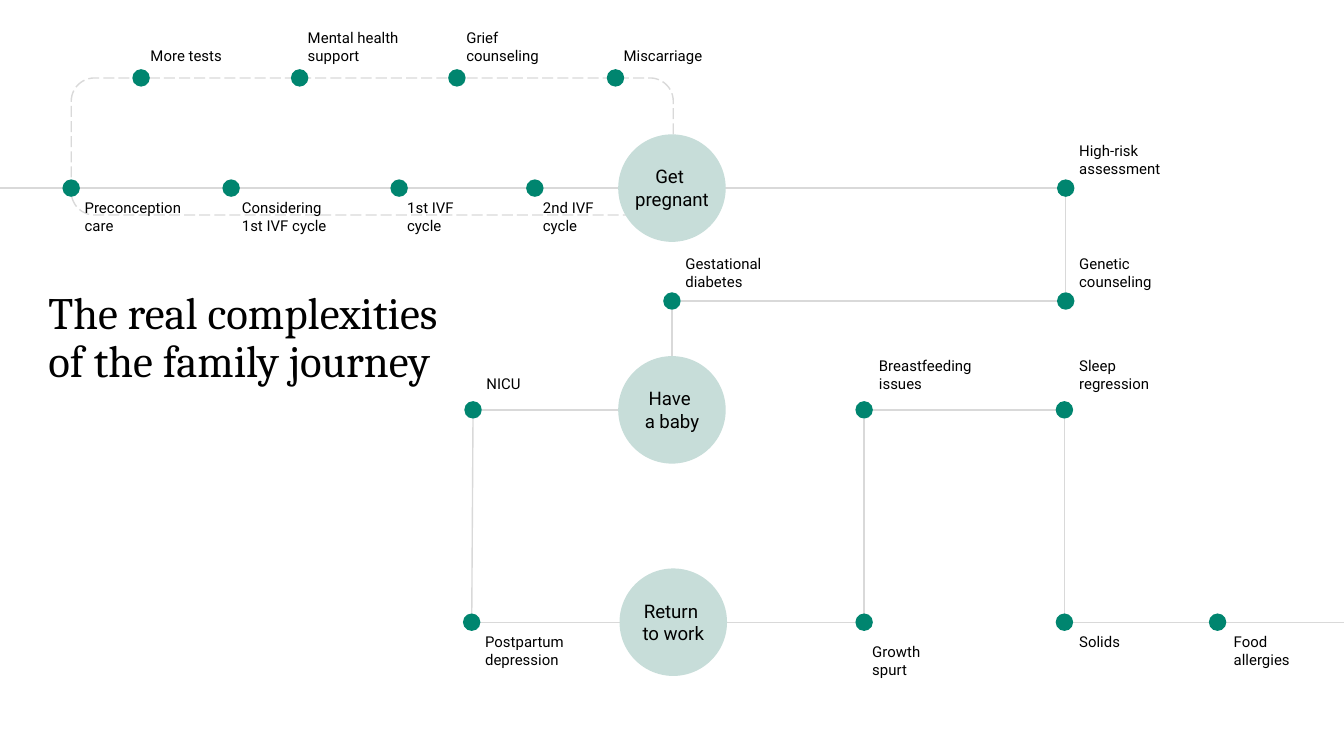
from itertools import pairwise
from math import hypot

from lxml.etree import SubElement
from pptx import Presentation
from pptx.dml.color import RGBColor
from pptx.enum.dml import MSO_LINE
from pptx.enum.shapes import MSO_CONNECTOR, MSO_SHAPE
from pptx.enum.text import MSO_ANCHOR, MSO_AUTO_SIZE, PP_ALIGN
from pptx.oxml.ns import qn
from pptx.util import Inches, Pt

GREEN, MINT, GREY, BLACK = "00856F", "C7DDD9", "D9D9D9", "000000"
STEP_SIZE, MILESTONE_SIZE = 0.13, 0.8
SLIDE_WIDTH = 10
SLIDE_HEIGHT = SLIDE_WIDTH * 9 / 16

# Row heights of the journey, top to bottom
TESTS, CYCLES, RISKS, BABY, WORK = 0.58, 1.4, 2.24, 3.05, 4.63

# Milestones: text, centre x, centre y
MILESTONES = [
    ("Get \npregnant", 5, CYCLES),
    ("Have \va baby", 5, BABY),
    ("Return \vto work", 5.01, WORK),
]

# Steps: text, centre x, centre y, label left, label top
STEPS = [
    ("More tests", 1.05, TESTS, 1.12, 0.21),
    ("Mental health support", 2.23, TESTS, 2.29, 0.21),
    ("Grief \vcounseling", 3.4, TESTS, 3.47, 0.21),
    ("Miscarriage", 4.58, TESTS, 4.64, 0.21),
    ("Preconception care", 0.53, CYCLES, 0.63, 1.48),
    ("Considering \v1st IVF cycle", 1.72, CYCLES, 1.8, 1.48),
    ("1st IVF\ncycle", 2.97, CYCLES, 3.03, 1.48),
    ("2nd IVF\ncycle", 3.98, CYCLES, 4.04, 1.48),
    ("High-risk assessment", 7.93, CYCLES, 8.03, 1.05),
    ("Genetic counseling", 7.93, RISKS, 8.03, 1.89),
    ("Gestational diabetes", 5, RISKS, 5.1, 1.89),
    ("NICU", 3.52, BABY, 3.62, 2.65),
    ("Postpartum depression", 3.51, WORK, 3.61, 4.71),
    ("Growth\nspurt", 6.43, WORK, 6.49, 4.78),
    ("Breastfeeding issues", 6.43, BABY, 6.54, 2.65),
    ("Sleep regression", 7.92, BABY, 8.03, 2.65),
    ("Solids", 7.92, WORK, 8.03, 4.71),
    ("Food\nallergies", 9.06, WORK, 9.18, 4.71),
]

# Stops joined one after another once pregnant
ROUTE = [
    "High-risk assessment", "Genetic counseling", "Gestational diabetes",
    "Have \va baby", "NICU", "Postpartum depression", "Return \vto work",
    "Growth\nspurt", "Breastfeeding issues", "Sleep regression", "Solids",
    "Food\nallergies",
]


def color(hex_value):
    return RGBColor.from_string(hex_value)


def write(frame, text, size=8, font="Roboto", align=PP_ALIGN.LEFT,
          anchor=MSO_ANCHOR.TOP, spacing=1.0):
    """Fill a text frame; newline starts a paragraph, \\v breaks a line."""
    frame.text = text
    frame.word_wrap = True
    frame.auto_size = MSO_AUTO_SIZE.NONE
    frame.vertical_anchor = anchor
    frame.margin_left = frame.margin_right = 0
    frame.margin_top = frame.margin_bottom = 0
    for paragraph in frame.paragraphs:
        paragraph.alignment = align
        paragraph.line_spacing = spacing
        paragraph.font.size = Pt(size)
        paragraph.font.name = font
        paragraph.font.color.rgb = color(BLACK)


def add_label(slide, text, left, top, height=0.27, **style):
    box = slide.shapes.add_textbox(
        Inches(left), Inches(top), Inches(0.8), Inches(height))
    write(box.text_frame, text, **style)


def add_circle(slide, x, y, size, fill):
    circle = slide.shapes.add_shape(
        MSO_SHAPE.OVAL, Inches(x - size / 2), Inches(y - size / 2),
        Inches(size), Inches(size))
    circle.shadow.inherit = False
    circle.fill.solid()
    circle.fill.fore_color.rgb = color(fill)
    circle.line.fill.background()


def add_line(slide, x1, y1, x2, y2):
    line = slide.shapes.add_connector(
        MSO_CONNECTOR.STRAIGHT, Inches(x1), Inches(y1), Inches(x2), Inches(y2))
    line.line.color.rgb = color(GREY)
    line.line.width = Pt(0.75)
    SubElement(line._element.spPr, qn("a:effectLst"))


def join(slide, start, end):
    """Draw a line between the rims of two stops given as (x, y, size)."""
    (x1, y1, size1), (x2, y2, size2) = start, end
    length = hypot(x2 - x1, y2 - y1)
    ux, uy = (x2 - x1) / length / 2, (y2 - y1) / length / 2
    add_line(slide, x1 + ux * size1, y1 + uy * size1,
             x2 - ux * size2, y2 - uy * size2)


def add_loop(slide):
    loop = slide.shapes.add_shape(
        MSO_SHAPE.ROUNDED_RECTANGLE,
        Inches(0.53), Inches(0.58), Inches(4.48), Inches(1.02))
    loop.adjustments[0] = 0.17
    loop.shadow.inherit = False
    loop.fill.background()
    loop.line.color.rgb = color(GREY)
    loop.line.width = Pt(0.75)
    loop.line.dash_style = MSO_LINE.LONG_DASH


def add_title(slide):
    title = slide.shapes.title
    title.left, title.top = Inches(0.36), Inches(2.16)
    title.width, title.height = Inches(3.08), Inches(1.45)
    write(title.text_frame, "The real complexities \vof the family journey",
          size=24, font="Cambria", spacing=0.9)


def main():
    prs = Presentation()
    prs.slide_width = Inches(SLIDE_WIDTH)
    prs.slide_height = Inches(SLIDE_HEIGHT)
    slide = prs.slides.add_slide(prs.slide_layouts[5])
    add_title(slide)

    # Journey lines, behind the stops
    stops = {text: (x, y, MILESTONE_SIZE) for text, x, y in MILESTONES}
    stops.update({text: (x, y, STEP_SIZE) for text, x, y, *_ in STEPS})
    add_loop(slide)
    add_line(slide, 0, CYCLES, 7.87, CYCLES)
    for start, end in pairwise(ROUTE):
        join(slide, stops[start], stops[end])
    add_line(slide, 9.12, WORK, SLIDE_WIDTH, WORK)

    # Milestones
    for text, x, y in MILESTONES:
        add_circle(slide, x, y, MILESTONE_SIZE, MINT)
        add_label(slide, text, x - 0.4, y - 0.17, height=0.34, size=10,
                  align=PP_ALIGN.CENTER)

    # Steps; labels above their dot rest on their bottom edge
    for text, x, y, left, top in STEPS:
        add_circle(slide, x, y, STEP_SIZE, GREEN)
        anchor = MSO_ANCHOR.BOTTOM if top < y else MSO_ANCHOR.TOP
        add_label(slide, text, left, top, anchor=anchor)

    prs.save("out.pptx")


if __name__ == "__main__":
    main()
